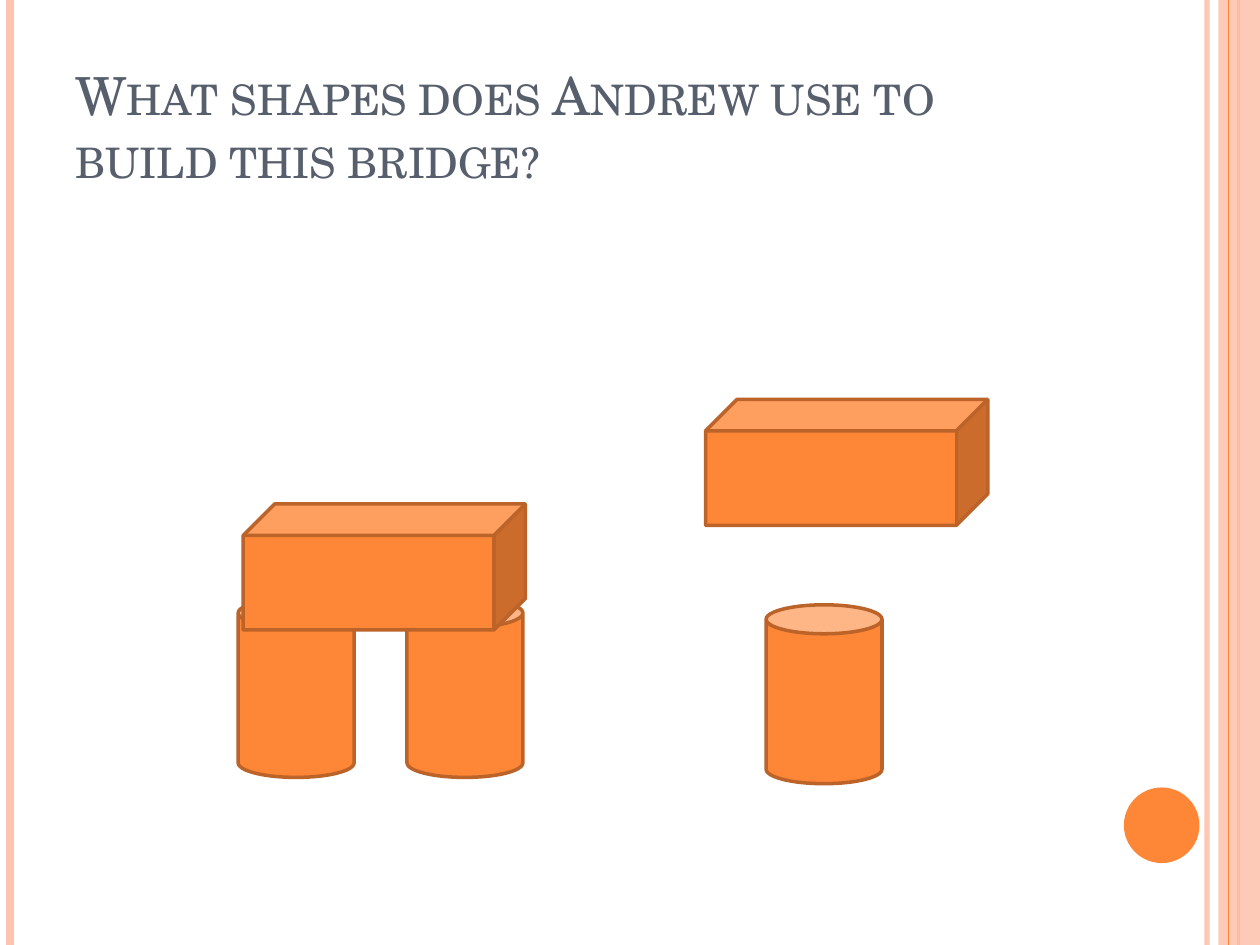
from dataclasses import dataclass

from lxml import etree
from pptx import Presentation
from pptx.dml.color import RGBColor
from pptx.enum.shapes import MSO_CONNECTOR, MSO_SHAPE as Shp
from pptx.enum.text import MSO_ANCHOR
from pptx.oxml.ns import qn
from pptx.util import Inches, Pt

ORANGE, PEACH, BROWN, SLATE = "FE8637", "FEC3AE", "BC6329", "575F6D"
WIDTH, HEIGHT = 10, 7.5


@dataclass
class Stripe:
    x: float
    color: str
    weight: float
    opacity: int = 100


@dataclass
class Block:
    kind: Shp
    x: float
    y: float


BLOCK_SIZES = {Shp.CAN: (0.92, 1.42), Shp.CUBE: (2.24, 1)}
STRIPES = [
    Stripe(9.58, PEACH, 3, 93),
    Stripe(0.08, PEACH, 4.5),
    Stripe(9.83, ORANGE, 1.5),
]
BAND_STRIPE = Stripe(9.75, ORANGE, 0.75)
BLOCKS = [
    Block(Shp.CAN, 1.89, 4.75),
    Block(Shp.CAN, 3.23, 4.75),
    Block(Shp.CUBE, 1.93, 4),
    Block(Shp.CUBE, 5.6, 3.17),
    Block(Shp.CAN, 6.08, 4.8),
]


def rgb(color: str) -> RGBColor:
    return RGBColor.from_string(color)


def set_opacity(element, percent: int) -> None:
    """Make the first solid colour inside a drawing element see-through."""
    clr = next(element.iter(qn("a:srgbClr")))
    etree.SubElement(clr, qn("a:alpha")).set("val", str(percent * 1000))


def add_stripe(s, stripe: Stripe) -> None:
    x = Inches(stripe.x)
    line = s.shapes.add_connector(MSO_CONNECTOR.STRAIGHT, x, 0, x, Inches(HEIGHT))
    line.line.color.rgb = rgb(stripe.color)
    line.line.width = Pt(stripe.weight)
    sp_pr = line._element.spPr
    if stripe.opacity < 100:
        set_opacity(sp_pr, stripe.opacity)
    etree.SubElement(sp_pr, qn("a:effectLst"))


def add_solid(s, kind: Shp, x: float, y: float, w: float, h: float, fill: str):
    sp = s.shapes.add_shape(kind, Inches(x), Inches(y), Inches(w), Inches(h))
    sp.shadow.inherit = False
    sp.fill.solid()
    sp.fill.fore_color.rgb = rgb(fill)
    sp.line.fill.background()
    return sp


def add_block(s, block: Block) -> None:
    sp = add_solid(s, block.kind, block.x, block.y, *BLOCK_SIZES[block.kind], ORANGE)
    sp.line.color.rgb = rgb(BROWN)
    sp.line.width = Pt(2)


def add_title(s, text: str) -> None:
    box = s.shapes.add_textbox(Inches(0.5), Inches(0.3), Inches(8.17), Inches(1.25))
    tf = box.text_frame
    tf.word_wrap = True
    tf.vertical_anchor = MSO_ANCHOR.BOTTOM
    r = tf.paragraphs[0].add_run()
    r.text = text
    r.font.name = "TeX Gyre Schola"
    r.font.size = Pt(30)
    r.font.color.rgb = rgb(SLATE)
    r._r.get_or_add_rPr().set("cap", "small")


def main() -> None:
    prs = Presentation()
    prs.slide_width, prs.slide_height = Inches(WIDTH), Inches(HEIGHT)
    s = prs.slides.add_slide(prs.slide_layouts[6])

    for stripe in STRIPES:
        add_stripe(s, stripe)
    band = add_solid(s, Shp.RECTANGLE, 9.67, 0, 0.33, HEIGHT, PEACH)
    set_opacity(band._element.spPr, 87)
    add_stripe(s, BAND_STRIPE)
    add_solid(s, Shp.OVAL, 8.92, 6.25, 0.6, 0.6, ORANGE)

    add_title(s, "What shapes does Andrew use to build this bridge?")
    for block in BLOCKS:
        add_block(s, block)
    prs.save("out.pptx")


if __name__ == "__main__":
    main()
